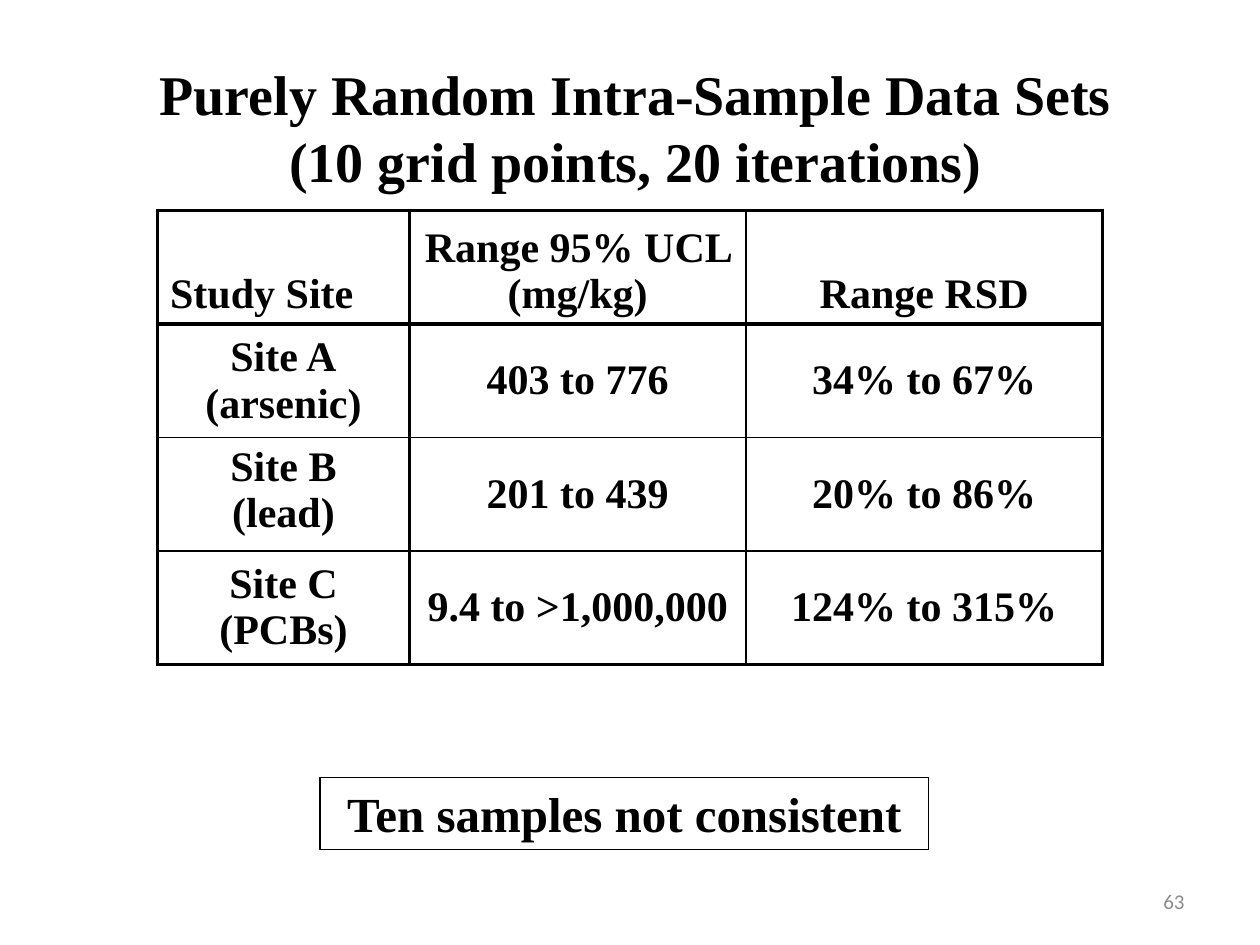
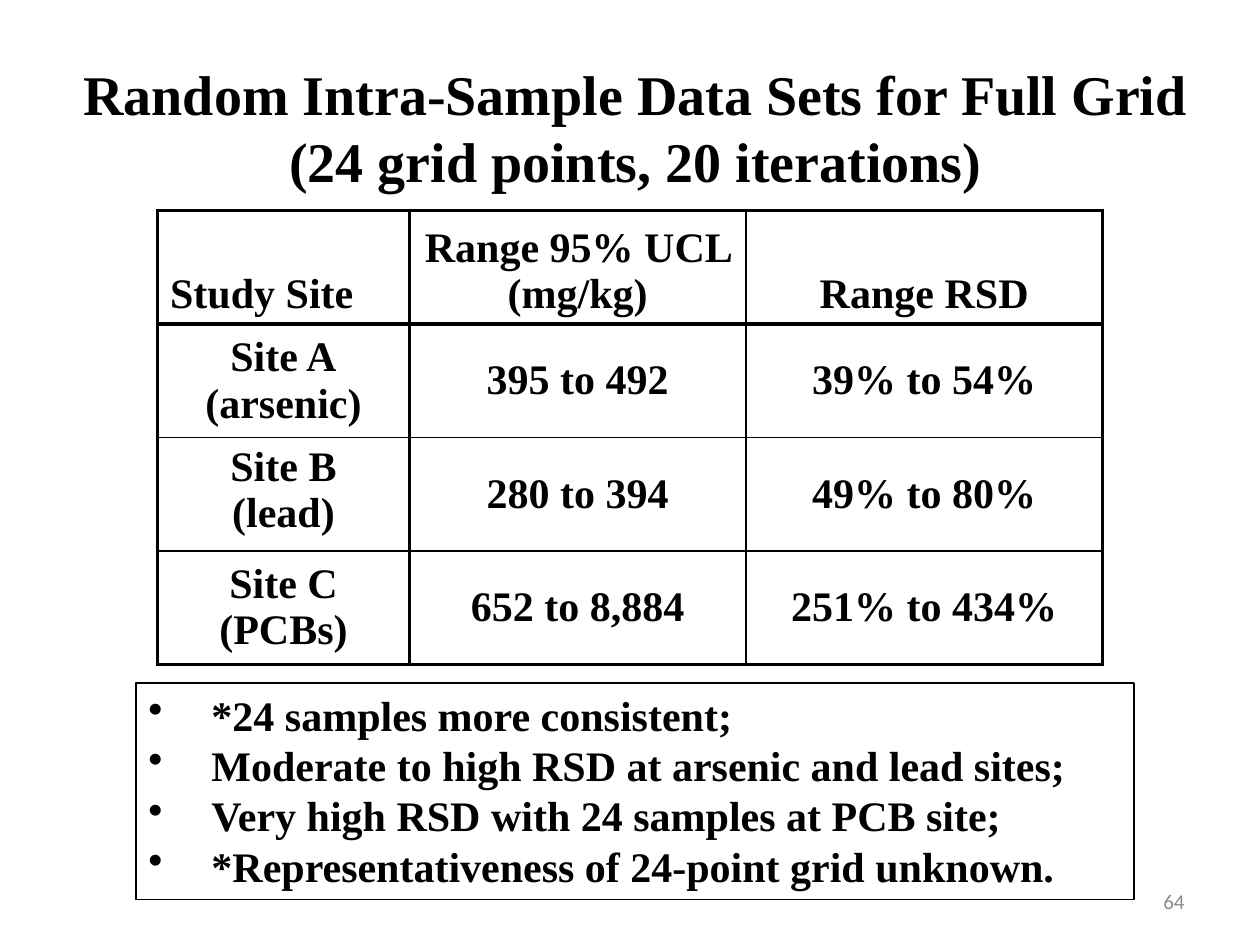
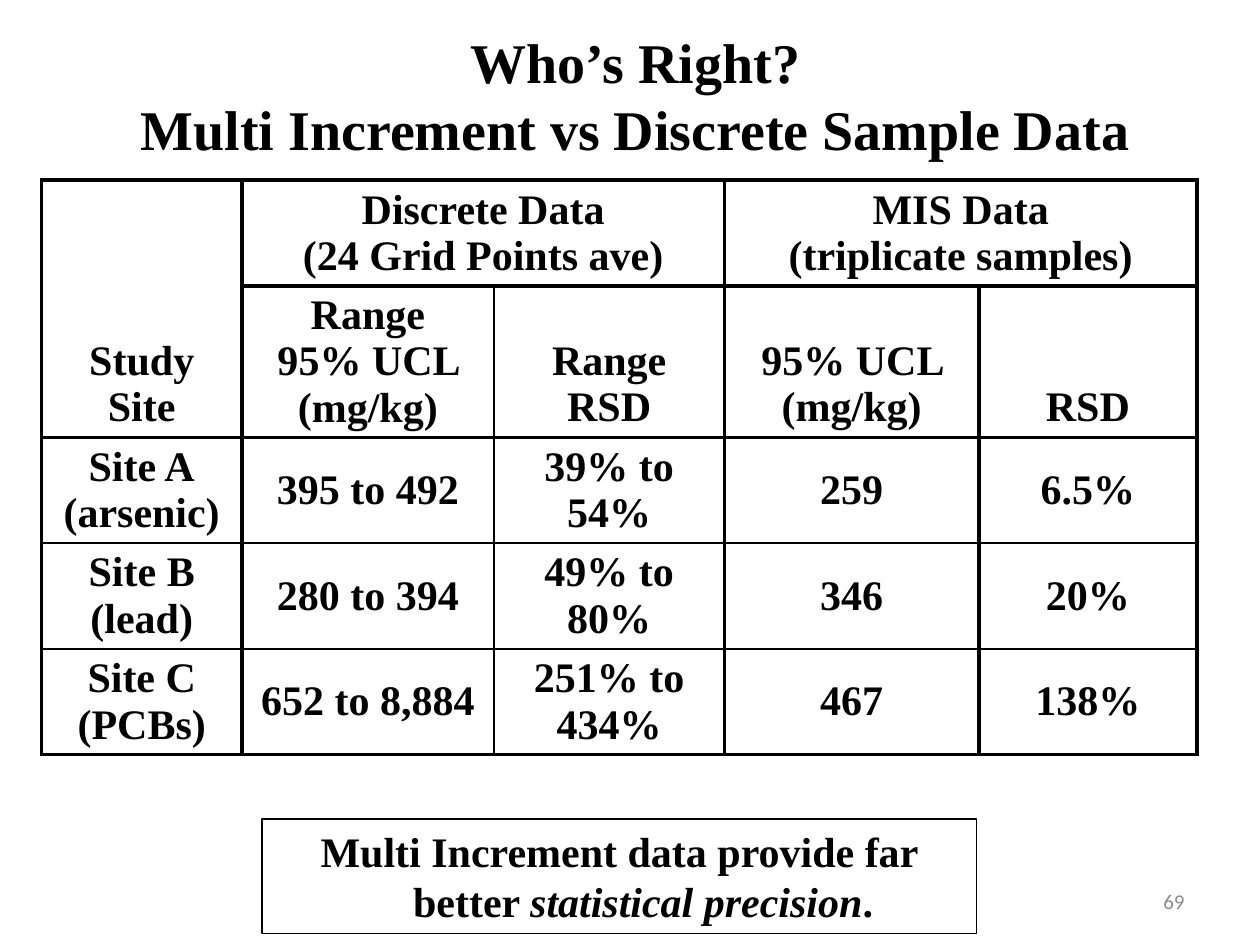
"""Build three slides comparing discrete and multi increment sample data."""
import pptx
import pptx.util
import pptx.dml.color
import pptx.enum.shapes
import pptx.enum.text
import pptx.oxml
import pptx.oxml.ns

Inches = pptx.util.Inches
Pt = pptx.util.Pt
ALIGN = pptx.enum.text.PP_ALIGN
ANCHOR = pptx.enum.text.MSO_ANCHOR
INK = {"text": "000000", "line": "000000", "page": "8C8C8C"}
SERIF = "Times New Roman"
THICK, THIN = 2.25, 1


def put(frame, text, size=24, face=SERIF, ink="text", bold=True, side=ALIGN.CENTER,
        anchor=ANCHOR.TOP, hang=0, mark=None):
    frame.word_wrap = True
    frame.vertical_anchor = anchor
    for num, line in enumerate(text.split("\n")):
        para = frame.paragraphs[0] if num == 0 else frame.add_paragraph()
        props = para._p.get_or_add_pPr()
        if hang:
            props.set("marL", str(Inches(hang)))
            props.set("indent", str(-Inches(hang)))
        if mark:
            bullet = pptx.oxml.parse_xml(f'<a:buChar {pptx.oxml.ns.nsdecls("a")} char="{mark}"/>')
            props.append(bullet)
        para.alignment = side
        for part, words in enumerate(line.split("_")):
            run = para.add_run()
            run.text = words
            run.font.size = Pt(size)
            run.font.name = face
            run.font.bold = bold
            run.font.italic = part % 2 == 1
            run.font.color.rgb = pptx.dml.color.RGBColor.from_string(INK[ink])


SITES = ["Site A\n(arsenic)", "Site B\n(lead)", "Site C\n(PCBs)"]
HEADS = ["Study Site", "Range 95% UCL (mg/kg)", "Range RSD"]
GRID = [["395 to 492", "39% to 54%"], ["280 to 394", "49% to 80%"],
        ["652 to 8,884", "251% to 434%"]]
TEN = [["403 to 776", "34% to 67%"], ["201 to 439", "20% to 86%"],
       ["9.4 to >1,000,000", "124% to 315%"]]
MIS = [["259", "6.5%"], ["346", "20%"], ["467", "138%"]]
SMALL = dict(left=1.25, top=1.67, cols=[2, 2.67, 2.83], rows=[0.9] * 4, spans=[])

slides = [
    dict(SMALL, page="63", high=0.42,
         title="Purely Random Intra-Sample Data Sets\n(10 grid points, 20 iterations)",
         heads=[HEADS], data=TEN, note="Ten samples not consistent",
         place=(2.54, 6.17, 4.83, 0.57), style=dict(size=28)),
    dict(SMALL, page="64", high=0.42,
         title="Random Intra-Sample Data Sets for Full Grid\n(24 grid points, 20 iterations)",
         heads=[HEADS], data=GRID,
         note="*24 samples more consistent;\n"
              "Moderate to high RSD at arsenic and lead sites;\n"
              "Very high RSD with 24 samples at PCB site;\n"
              "*Representativeness of 24-point grid unknown.",
         place=(1.08, 5.42, 7.92, 1.72), style=dict(side=ALIGN.LEFT, hang=0.5, mark="•")),
    dict(page="69", high=0.17, title="Who’s Right?\nMulti Increment vs Discrete Sample Data",
         left=0.33, top=1.43, cols=[1.59, 2, 1.83, 2.02, 1.73],
         rows=[0.84, 1.2, 0.84, 0.84, 0.84],
         spans=[(0, 0, 1, 0), (0, 1, 0, 2), (0, 3, 0, 4)],
         heads=[["Study Site", "Discrete Data\n(24 Grid Points ave)", "",
                 "MIS Data\n(triplicate samples)", ""],
                ["", "Range\n95% UCL (mg/kg)", "Range RSD", "95% UCL (mg/kg)", "RSD"]],
         data=[grid + mis for grid, mis in zip(GRID, MIS)],
         note="Multi Increment data provide far better _statistical precision_.",
         place=(2.08, 6.5, 5.67, 0.91), style=dict(hang=0.38)),
]

deck = pptx.Presentation()
deck.slide_width, deck.slide_height = Inches(10), Inches(7.5)

for item in slides:
    shapes = deck.slides.add_slide(deck.slide_layouts[6]).shapes
    page = shapes.add_textbox(Inches(7.17), Inches(6.95), Inches(2.33), Inches(0.4))
    put(page.text_frame, item["page"], size=12, face="Calibri", ink="page", bold=False,
        side=ALIGN.RIGHT, anchor=ANCHOR.MIDDLE)
    title = shapes.add_textbox(Inches(0.17), Inches(item["high"]), Inches(9.75), Inches(1.18))
    put(title.text_frame, item["title"], size=32)

    cols, rows, deep = item["cols"], item["rows"], len(item["heads"])
    table = shapes.add_table(len(rows), len(cols), Inches(item["left"]), Inches(item["top"]),
                             Inches(sum(cols)), Inches(sum(rows))).table
    table.first_row = table.horz_banding = False
    for col, width in zip(table.columns, cols):
        col.width = Inches(width)
    for row, height in zip(table.rows, rows):
        row.height = Inches(height)
    for top, left, low, right in item["spans"]:
        table.cell(top, left).merge(table.cell(low, right))

    body = [[site] + vals for site, vals in zip(SITES, item["data"])]
    for r, vals in enumerate(item["heads"] + body):
        for c, text in enumerate(vals):
            cell = table.cell(r, c)
            tight = deep == 2 and (r >= deep or "\n" in text)
            if tight:
                cell.vertical_anchor = ANCHOR.MIDDLE
                cell.margin_top = cell.margin_bottom = 0
            elif r < deep:
                cell.vertical_anchor = ANCHOR.BOTTOM
            elif text == SITES[1]:
                cell.vertical_anchor = ANCHOR.TOP
            else:
                cell.vertical_anchor = ANCHOR.MIDDLE
            if text:
                first = deep == 1 and r == c == 0
                put(cell.text_frame, text, side=ALIGN.LEFT if first else ALIGN.CENTER)
            props = cell._tc.get_or_add_tcPr()
            for name, edge in (("L", c), ("R", c + 1), ("T", r), ("B", r + 1)):
                if name in "LR":
                    thin = edge == 2 and r >= deep - 1
                else:
                    thin = deep < edge < len(rows)
                wide = Pt(THIN if thin else THICK)
                props.append(pptx.oxml.parse_xml(
                    f'<a:ln{name} {pptx.oxml.ns.nsdecls("a")} w="{wide}"><a:solidFill>'
                    f'<a:srgbClr val="{INK["line"]}"/></a:solidFill></a:ln{name}>'))
            cell.fill.background()

    note = shapes.add_shape(pptx.enum.shapes.MSO_SHAPE.RECTANGLE,
                            *[Inches(size) for size in item["place"]])
    note.shadow.inherit = False
    note.fill.background()
    note.line.color.rgb = pptx.dml.color.RGBColor.from_string(INK["line"])
    note.line.width = Pt(0.75)
    put(note.text_frame, item["note"], **item["style"])

deck.save("out.pptx")
